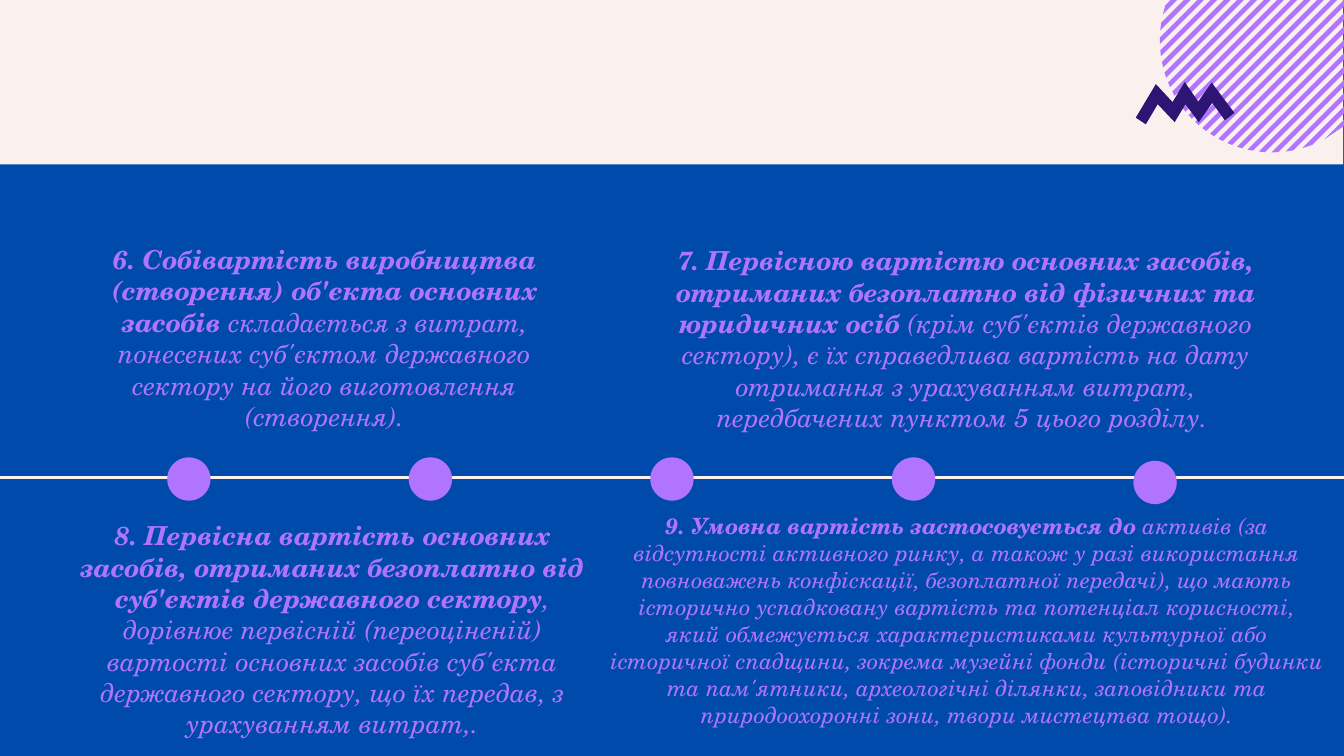
import math
import pptx
import pptx.util
import pptx.dml.color
import pptx.enum.shapes
import pptx.enum.text
import lxml.etree

Cm = pptx.util.Cm
Pt = pptx.util.Pt

THEME = {
    "white": "FFFFFF",
    "blue": "004AAC",
    "cream": "FAF1EF",
    "violet": "B074FF",
    "indigo": "2D1673",
    "font": "TeX Gyre Schola",
    "large": 28,
    "small": 24,
}

WIDTH, HEIGHT = 50.8, 28.58
PANELS = [
    ((0, 0, WIDTH, HEIGHT), "blue"),
    ((-0.03, 0, WIDTH, 6.22), "cream"),
]

RULES = [
    ("7. Первісною вартістю основних засобів, отриманих безоплатно від "
     "фізичних та юридичних осіб ",
     "(крім суб'єктів державного сектору), є їх справедлива вартість на дату "
     "отримання з урахуванням витрат, передбачених пунктом 5 цього розділу. ",
     "large", (24.72, 9.12, 23.57, 7.44)),
    ("6. Собівартість виробництва (створення) об'єкта основних засобів ",
     "складається з витрат, понесених суб'єктом державного сектору на його "
     "виготовлення (створення).",
     "large", (2.46, 9.08, 19.61, 7.44)),
    ("8. Первісна вартість основних засобів, отриманих безоплатно від "
     "суб'єктів державного сектору",
     ", дорівнює первісній (переоціненій) вартості основних засобів суб'єкта "
     "державного сектору, що їх передав, з урахуванням витрат,.",
     "large", (2.69, 19.52, 19.76, 8.64)),
    ("9. Умовна вартість застосовується до ",
     "активів (за відсутності активного ринку, а також у разі використання "
     "повноважень конфіскації, безоплатної передачі), що мають історично "
     "успадковану вартість та потенціал корисності, який обмежується "
     "характеристиками культурної або історичної спадщини, зокрема музейні "
     "фонди (історичні будинки та пам'ятники, археологічні ділянки, "
     "заповідники та природоохоронні зони, твори мистецтва тощо).",
     "small", (22.79, 19.25, 27.51, 8.46)),
]

LINE_Y = 18.05
DOT_RADIUS, DOT_FIRST_X, DOT_STEP, DOT_CORNERS = 0.82, 7.14, 9.13, 40
DOT_YS = [18.11, 18.11, 18.11, 18.11, 18.24]

DISC_X, DISC_Y, DISC_R = 48.08, 1.52, 4.24
STRIPES, STRIPE_FIRST, STRIPE_LAST, STRIPE_WIDTH = 23, 44.25, 55.33, 0.25

ZIGZAG = [
    (43.31, 4.7), (42.93, 4.45), (43.69, 3.18), (44.32, 3.86), (44.78, 3.1),
    (45.29, 3.84), (45.8, 3.12), (46.66, 4.27), (46.3, 4.55), (45.82, 3.89),
    (45.31, 4.62), (44.81, 3.94), (44.4, 4.62), (43.76, 3.94),
]


def rgb(name):
    return pptx.dml.color.RGBColor.from_string(THEME[name])


def paint(sp, color):
    sp.shadow.inherit = False
    sp.fill.solid()
    sp.fill.fore_color.rgb = rgb(color)
    sp.line.fill.background()


def add_panel(s, box, color):
    kind = pptx.enum.shapes.MSO_SHAPE.RECTANGLE
    paint(s.shapes.add_shape(kind, *map(Cm, box)), color)


def add_outlines(s, outlines, color):
    outlines = [[(Cm(x), Cm(y)) for x, y in points] for points in outlines]
    builder = s.shapes.build_freeform(*outlines[0][0])
    for i, points in enumerate(outlines):
        if i:
            builder.move_to(*points[0])
        builder.add_line_segments(points[1:], close=True)
    paint(builder.convert_to_shape(), color)


def diagonal_ends(total):
    offset = (total - DISC_X - DISC_Y) / 2
    reach = math.sqrt(DISC_R ** 2 / 2 - offset ** 2)
    x = DISC_X + offset - reach
    right = min(total, WIDTH)
    return (x, total - x), (right, total - right)


def stripe_outlines():
    step = (STRIPE_LAST - STRIPE_FIRST) / (STRIPES - 1)
    for i in range(STRIPES):
        start = STRIPE_FIRST + i * step
        low, high = diagonal_ends(start)
        next_low, next_high = diagonal_ends(start + STRIPE_WIDTH)
        yield [low, high, next_high, next_low]


def dot_outlines():
    angles = [2 * math.pi * i / DOT_CORNERS for i in range(DOT_CORNERS)]
    for i, y in enumerate(DOT_YS):
        x = DOT_FIRST_X + i * DOT_STEP
        yield [(x + DOT_RADIUS * math.cos(a), y + DOT_RADIUS * math.sin(a))
               for a in angles]


def add_timeline(s):
    line = s.shapes.add_connector(pptx.enum.shapes.MSO_CONNECTOR.STRAIGHT,
                                  Cm(0), Cm(LINE_Y), Cm(WIDTH), Cm(LINE_Y))
    line.line.color.rgb = rgb("cream")
    line.line.width = Pt(3.6)
    lxml.etree.SubElement(line._element.spPr, pptx.oxml.ns.qn("a:effectLst"))
    add_outlines(s, list(dot_outlines()), "violet")


def add_rule(s, lead, body, size, box):
    tf = s.shapes.add_textbox(*map(Cm, box)).text_frame
    tf.word_wrap = True
    tf.auto_size = pptx.enum.text.MSO_AUTO_SIZE.SHAPE_TO_FIT_TEXT
    p = tf.paragraphs[0]
    p.alignment = pptx.enum.text.PP_ALIGN.CENTER
    p.font.name = THEME["font"]
    p.font.size = Pt(THEME[size])
    p.font.italic = True
    p.font.color.rgb = rgb("violet")
    for text, bold in ((lead, True), (body, False)):
        r = p.add_run()
        r.text = text
        r.font.bold = bold


def main():
    prs = pptx.Presentation()
    prs.slide_width, prs.slide_height = Cm(WIDTH), Cm(HEIGHT)
    s = prs.slides.add_slide(prs.slide_layouts[6])
    s.background.fill.solid()
    s.background.fill.fore_color.rgb = rgb("white")

    for box, color in PANELS:
        add_panel(s, box, color)
    add_timeline(s)
    add_outlines(s, list(stripe_outlines()), "violet")
    add_outlines(s, [ZIGZAG], "indigo")
    for rule in RULES:
        add_rule(s, *rule)
    prs.save("out.pptx")


if __name__ == "__main__":
    main()
